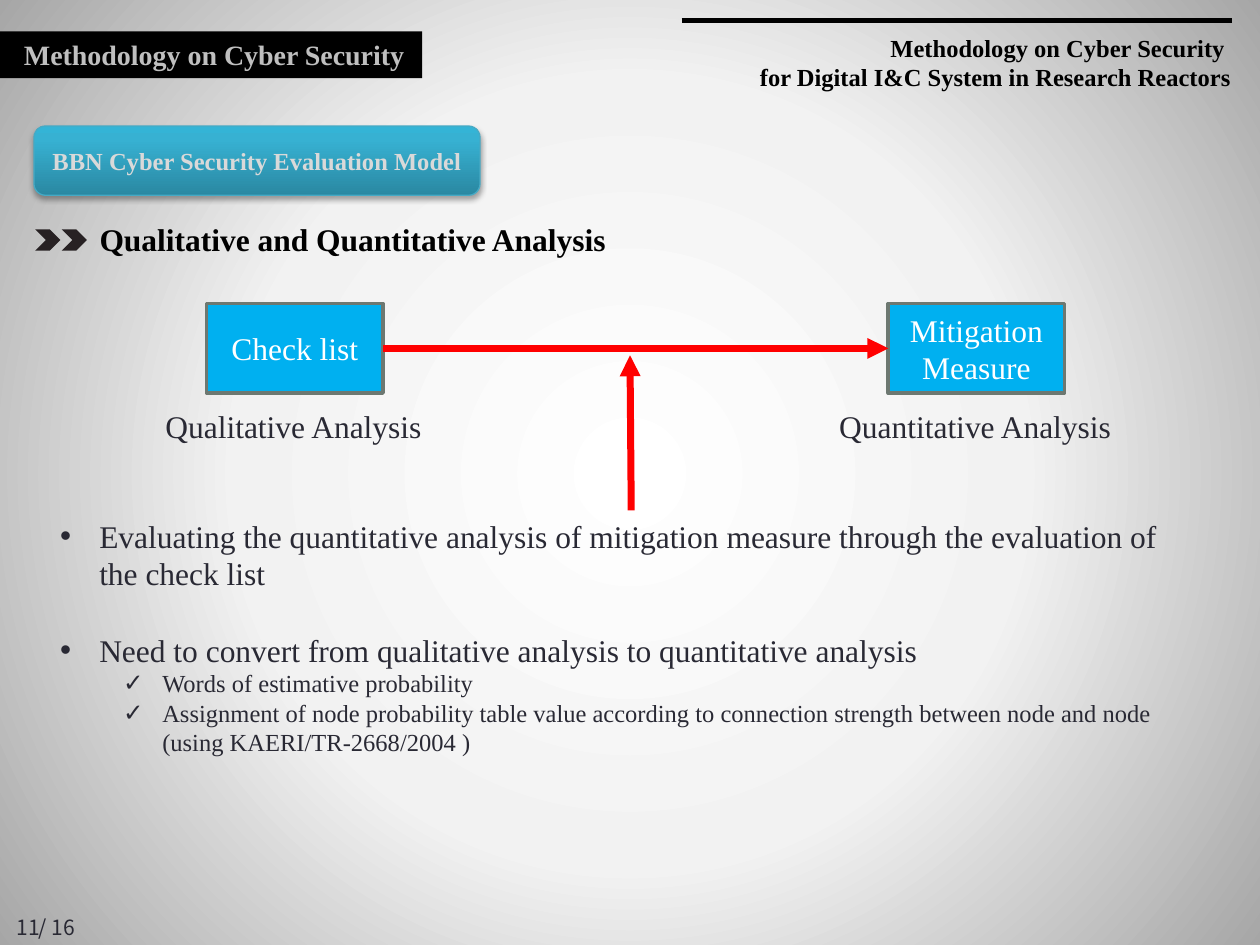
from dataclasses import dataclass

from lxml import etree
from pptx import Presentation
from pptx.dml.color import RGBColor
from pptx.enum.shapes import MSO_CONNECTOR, MSO_SHAPE
from pptx.enum.text import MSO_ANCHOR, PP_ALIGN
from pptx.oxml.ns import qn
from pptx.util import Inches, Pt

RECT, ROUND, CHEVRON = MSO_SHAPE.RECTANGLE, MSO_SHAPE.ROUNDED_RECTANGLE, MSO_SHAPE.CHEVRON
STRAIGHT = MSO_CONNECTOR.STRAIGHT
LEFT, CENTER, RIGHT = PP_ALIGN.LEFT, PP_ALIGN.CENTER, PP_ALIGN.RIGHT
TOP, MIDDLE = MSO_ANCHOR.TOP, MSO_ANCHOR.MIDDLE
SIDE_LEFT, SIDE_RIGHT = 1, 3


@dataclass(frozen=True)
class Theme:
    font: str = "Times New Roman"
    page_font: str = "Noto Sans CJK KR"
    black: str = "000000"
    white: str = "FFFFFF"
    ink: str = "292934"
    chevron: str = "272123"
    box: str = "00B0F0"
    box_edge: str = "6D7871"
    arrow: str = "FF0000"
    button_edge: str = "46AAC5"
    button_text: str = "D9D9D9"
    bar_text: str = "BFBFBF"
    backdrop: tuple = ((0, "FFFFFF"), (50, "F2F2F2"), (100, "A6A6A6"))
    button: tuple = ((0, "2A88A2"), (80, "37B1D2"), (100, "34B4D6"))
    body: int = 18
    bar: int = 16
    small: int = 14
    page: int = 12


def add(parent, tag, **attrs):
    return etree.SubElement(parent, qn(tag), {k: str(v) for k, v in attrs.items()})


class Deck:
    def __init__(self, theme):
        self.t = theme
        self.prs = Presentation()
        self.prs.slide_width, self.prs.slide_height = Inches(10), Inches(7.5)
        self.s = self.prs.slides.add_slide(self.prs.slide_layouts[6])

    def style(self, p, size, color, bold=False, font=None, align=LEFT):
        p.alignment = align
        for r in p.runs:
            r.font.name = font or self.t.font
            r.font.size, r.font.bold = Pt(size), bold
            r.font.color.rgb = RGBColor.from_string(color)

    def label(self, sp, text, size, color, anchor=TOP, indent=0, **fmt):
        tf = sp.text_frame
        tf.word_wrap, tf.vertical_anchor = True, anchor
        tf.margin_left = Inches(0.1 + indent)
        tf.text = text
        for p in tf.paragraphs:
            self.style(p, size, color, **fmt)

    def text(self, at, text, size, color, **fmt):
        sp = self.s.shapes.add_textbox(*map(Inches, at))
        self.label(sp, text, size, color, **fmt)

    def shape(self, kind, at, fill=None, edge=None, width=0):
        sp = self.s.shapes.add_shape(kind, *map(Inches, at))
        sp.shadow.inherit = False
        if fill:
            sp.fill.solid()
            sp.fill.fore_color.rgb = RGBColor.from_string(fill)
        else:
            sp.fill.background()
        if edge:
            sp.line.color.rgb = RGBColor.from_string(edge)
            sp.line.width = Pt(width)
        else:
            sp.line.fill.background()
        return sp

    def gradient(self, sp, stops, angle=None):
        """Linear at the given angle, or circular from the centre without one."""
        spPr = sp._element.spPr
        grad = etree.Element(qn("a:gradFill"), rotWithShape="1")
        gs_list = add(grad, "a:gsLst")
        for pos, color in stops:
            add(add(gs_list, "a:gs", pos=pos * 1000), "a:srgbClr", val=color)
        if angle is None:
            circle = etree.SubElement(grad, qn("a:path"), {"path": "circle"})
            add(circle, "a:fillToRect", l=50000, t=50000, r=50000, b=50000)
        else:
            add(grad, "a:lin", ang=angle * 60000, scaled=0)
        spPr.replace(spPr.find(qn("a:noFill")), grad)

    def drop_shadow(self, sp, color, opacity, blur, distance):
        effects = sp._element.spPr.find(qn("a:effectLst"))
        shadow = add(effects, "a:outerShdw", blurRad=Pt(blur), dist=Pt(distance),
                     dir=90 * 60000, rotWithShape=0)
        add(add(shadow, "a:srgbClr", val=color), "a:alpha", val=opacity * 1000)

    def line(self, start, end, color, width, arrow=False):
        c = self.s.shapes.add_connector(STRAIGHT, *map(Inches, start + end))
        c.line.color.rgb = RGBColor.from_string(color)
        c.line.width = Pt(width)
        if arrow:
            add(c._element.spPr.find(qn("a:ln")), "a:tailEnd", type="triangle")
        add(c._element.spPr, "a:effectLst")
        return c

    def bullets(self, at, items):
        """Each item is (level, text, space before in points)."""
        tf = self.s.shapes.add_textbox(*map(Inches, at)).text_frame
        tf.word_wrap = True
        for i, (level, text, space) in enumerate(items):
            p = tf.paragraphs[0] if i == 0 else tf.add_paragraph()
            p.text, p.level = text, level
            pPr = p._p.get_or_add_pPr()
            pPr.set("marL", str(Inches(0.31 + 0.5 * level)))
            pPr.set("indent", str(Inches(-0.31)))
            add(pPr, "a:buFont", typeface="Arial")
            add(pPr, "a:buChar", char="•✓"[level])
            if space:
                p.space_before = Pt(space)
            self.style(p, (self.t.body, self.t.small)[level], self.t.ink)


def main():
    t = Theme()
    d = Deck(t)

    # Backdrop
    d.gradient(d.shape(RECT, (0, -0.01, 10, 7.54)), t.backdrop)

    # Header
    d.line((5.41, 0.16), (9.78, 0.16), t.black, 3)
    d.text((5.24, 0.21, 4.63, 0.57),
           "Methodology on Cyber Security \nfor Digital I&C System in Research Reactors",
           t.small, t.black, bold=True, align=RIGHT)
    bar = d.shape(RECT, (-0.2, 0.25, 3.55, 0.37), t.black)
    d.label(bar, "Methodology on Cyber Security", t.bar, t.bar_text, indent=0.29, bold=True)

    # Section button
    button = d.shape(ROUND, (0.27, 1, 3.54, 0.55), edge=t.button_edge, width=0.75)
    d.gradient(button, t.button, angle=270)
    d.drop_shadow(button, t.black, opacity=35, blur=3.1, distance=1.8)
    d.label(button, "BBN Cyber Security Evaluation Model", t.small, t.button_text,
            anchor=MIDDLE, bold=True, align=CENTER)

    # Heading with double chevron
    for i in range(2):
        d.shape(CHEVRON, (0.28 + 0.21 * i, 1.82, 0.2, 0.17), t.chevron)
    d.text((0.45, 1.7, 5.57, 0.4), "Qualitative and Quantitative Analysis",
           t.body, t.black, indent=0.24, bold=True)

    # Flow from check list to mitigation measure
    boxes = []
    for x, name, caption, cap_x, cap_w in (
            (1.64, "Check list", "Qualitative Analysis", 1.08, 2.5),
            (7.05, "Mitigation Measure", "Quantitative Analysis", 6.47, 2.54)):
        box = d.shape(RECT, (x, 2.41, 1.4, 0.71), t.box, t.box_edge, 2.08)
        d.label(box, name, t.body, t.white, anchor=MIDDLE, align=CENTER)
        d.text((cap_x, 3.18, cap_w, 0.4), caption, t.body, t.ink, align=CENTER)
        boxes.append(box)
    flow = d.line((3.04, 2.77), (7.05, 2.77), t.arrow, 4, arrow=True)
    flow.begin_connect(boxes[0], SIDE_RIGHT)
    flow.end_connect(boxes[1], SIDE_LEFT)
    d.line((5.01, 4.05), (5, 2.82), t.arrow, 4, arrow=True)

    # Explanation
    d.bullets((0.38, 4.05, 9.27, 2.02), (
        (0, "Evaluating the quantitative analysis of mitigation measure through "
            "the evaluation of the check list", 0),
        (0, "Need to convert from qualitative analysis to quantitative analysis", 22),
        (1, "Words of estimative probability", 0),
        (1, "Assignment of node probability table value according to connection strength "
            "between node and node (using KAERI/TR-2668/2004 )", 0)))

    # Page number
    for width, text, indent in ((0.75, "/ 16", 0.15), (0.45, "11", 0)):
        d.text((0, 7.21, width, 0.29), text, t.page, t.ink,
               indent=indent, font=t.page_font, align=CENTER)

    d.prs.save("out.pptx")


if __name__ == "__main__":
    main()
